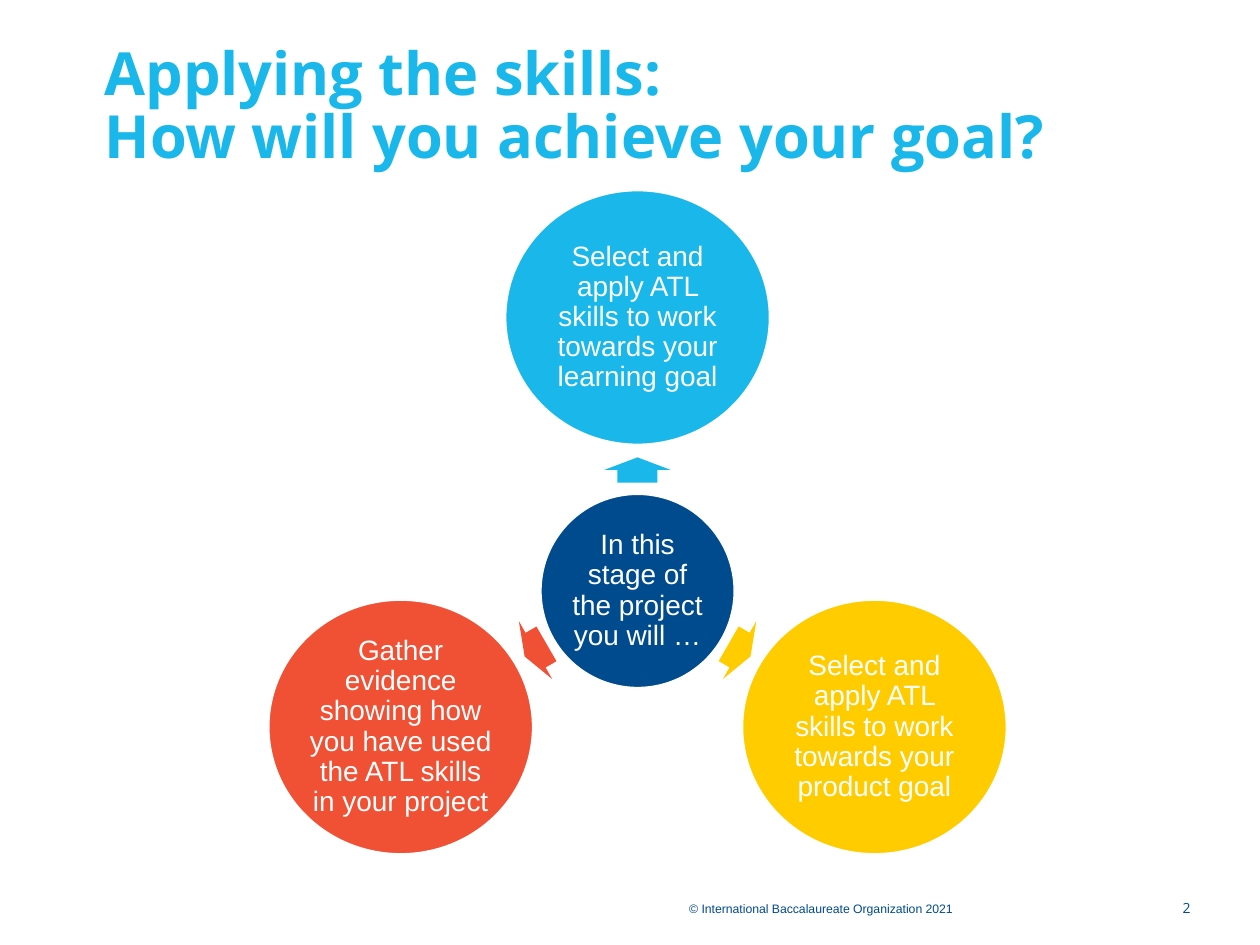
from pptx import Presentation
from pptx.dml.color import RGBColor
from pptx.enum.shapes import MSO_SHAPE
from pptx.enum.text import MSO_ANCHOR, MSO_AUTO_SIZE, PP_ALIGN
from pptx.util import Inches, Pt

OVAL, ARROW = MSO_SHAPE.OVAL, MSO_SHAPE.RIGHT_ARROW
MIDDLE, BOTTOM = MSO_ANCHOR.MIDDLE, MSO_ANCHOR.BOTTOM
LEFT, CENTER, RIGHT = PP_ALIGN.LEFT, PP_ALIGN.CENTER, PP_ALIGN.RIGHT
FIXED_SIZE = MSO_AUTO_SIZE.NONE
SKY, NAVY, YELLOW, RED, WHITE = "1AB7EA", "004B8D", "FFCC00", "F05033", "FFFFFF"


def color(value):
    return RGBColor.from_string(value)


def write(holder, text, font_name, size, text_color, align, spacing, anchor=None, inset=0):
    frame = holder.text_frame
    frame.text = text
    frame.word_wrap = True
    frame.auto_size = FIXED_SIZE
    frame.margin_left = frame.margin_right = Inches(inset)
    frame.margin_top = frame.margin_bottom = Inches(inset)
    if anchor is not None:
        frame.vertical_anchor = anchor
    paragraph = frame.paragraphs[0]
    paragraph.alignment = align
    paragraph.line_spacing = spacing
    paragraph.font.name = font_name
    paragraph.font.size = Pt(size)
    paragraph.font.color.rgb = color(text_color)
    return paragraph


prs = Presentation()
prs.slide_width, prs.slide_height = Inches(10), Inches(7.5)
slide = prs.slides.add_slide(prs.slide_layouts[5])
shapes = slide.shapes

# Title
title = shapes.title
title.left, title.top = Inches(0.83), Inches(0.35)
title.width, title.height = Inches(8.62), Inches(1.01)
heading = write(title, "Applying the skills:\vHow will you achieve your goal?",
                "Open Sans", 34, SKY, LEFT, 0.89, BOTTOM)
heading.font.bold = True

# Copyright line and page number
copyright_line = shapes.add_textbox(Inches(5.47), Inches(7.13), Inches(2.67), Inches(0.13))
write(copyright_line, "© International Baccalaureate Organization 2021",
      "Arial", 7, NAVY, LEFT, Pt(10))
page_number = shapes.add_textbox(Inches(9.17), Inches(7.13), Inches(0.28), Inches(0.16))
write(page_number, "2", "Open Sans", 8, NAVY, RIGHT, Pt(10))

# Radial diagram: the hub, then an arrow and a circle for each step
# (text, fill, circle centre, circle size, arrow centre, arrow rotation)
circles = [
    ("In this stage of the project you will …", NAVY,
     (5.06, 4.69), (1.55, 1.55), None, 0),
    ("Select and apply ATL skills to work towards your learning goal", SKY,
     (5.06, 2.52), (2.11, 2.03), (5.06, 3.73), 270),
    ("Select and apply ATL skills to work towards your product goal", YELLOW,
     (6.94, 5.77), (2.11, 2.03), (5.87, 5.16), 30),
    ("Gather evidence showing how you have used the ATL skills in your project", RED,
     (3.18, 5.77), (2.11, 2.03), (4.25, 5.16), 150),
]
ARROW_W, ARROW_H = 0.2, 0.53

for text, fill, (x, y), (width, height), arrow_center, rotation in circles:
    if arrow_center:
        arrow_x, arrow_y = arrow_center
        arrow = shapes.add_shape(ARROW, Inches(arrow_x - ARROW_W / 2),
                                 Inches(arrow_y - ARROW_H / 2),
                                 Inches(ARROW_W), Inches(ARROW_H))
        arrow.rotation = rotation
        arrow.adjustments[0], arrow.adjustments[1] = 0.6, 0.5
        arrow.fill.solid()
        arrow.fill.fore_color.rgb = color(fill)
        arrow.line.fill.background()
        arrow.shadow.inherit = False

    circle = shapes.add_shape(OVAL, Inches(x - width / 2), Inches(y - height / 2),
                              Inches(width), Inches(height))
    circle.fill.solid()
    circle.fill.fore_color.rgb = color(fill)
    circle.line.color.rgb = color(WHITE)
    circle.line.width = Pt(2)
    circle.shadow.inherit = False
    write(circle, text, "Arial", 16, WHITE, CENTER, 0.9, MIDDLE, 0.02)

prs.save("out.pptx")
